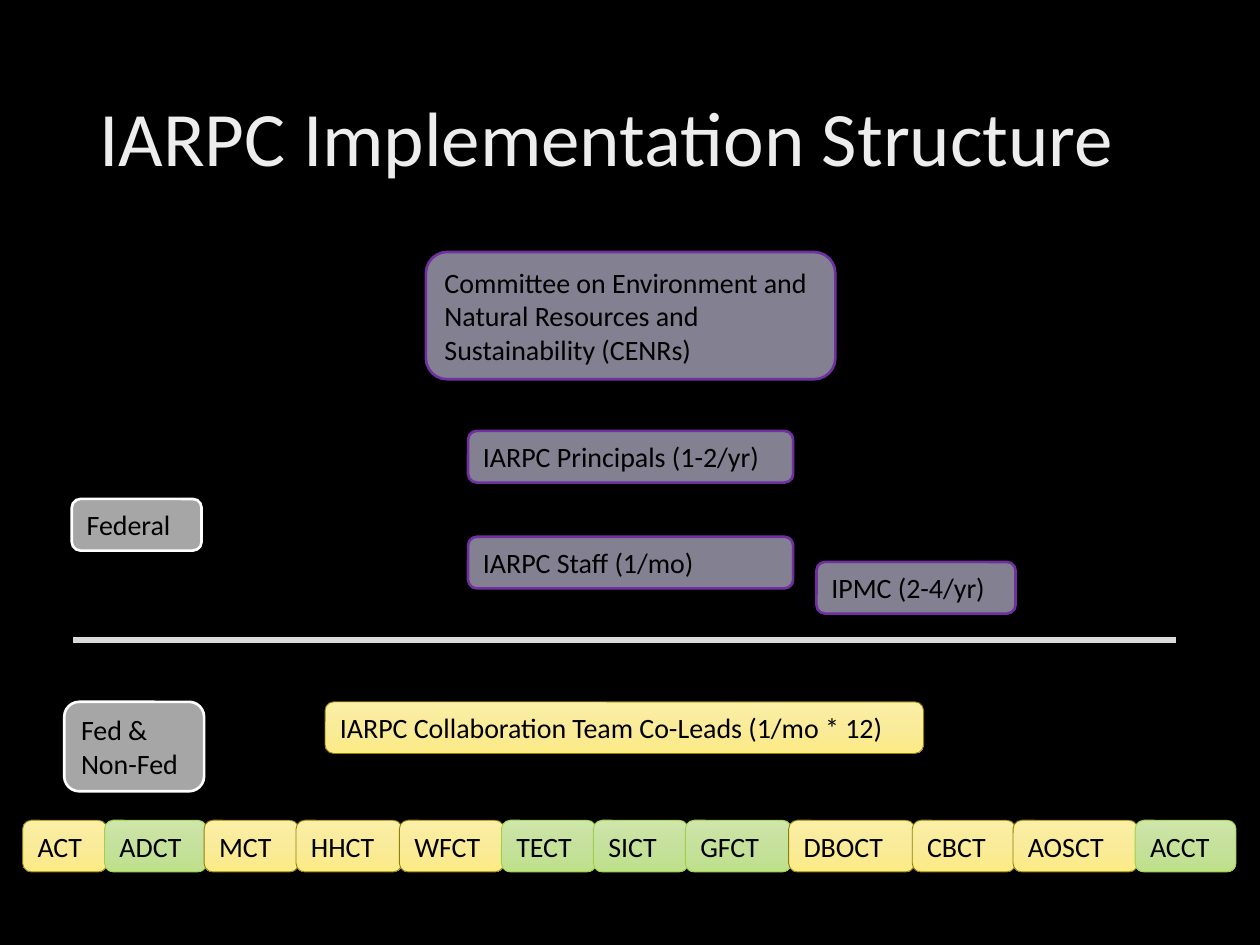
from lxml import etree
from pptx import Presentation
from pptx.dml.color import RGBColor
from pptx.enum.shapes import MSO_CONNECTOR, MSO_SHAPE
from pptx.enum.text import MSO_ANCHOR, MSO_AUTO_SIZE, PP_ALIGN
from pptx.oxml.ns import qn
from pptx.util import Inches, Pt

ROUND = MSO_SHAPE.ROUNDED_RECTANGLE
LINE = MSO_CONNECTOR.STRAIGHT
MID = MSO_ANCHOR.MIDDLE
GROW = MSO_AUTO_SIZE.SHAPE_TO_FIT_TEXT
LEFT = PP_ALIGN.LEFT

BLACK = RGBColor(0x00, 0x00, 0x00)
WHITE = RGBColor(0xFF, 0xFF, 0xFF)
SILVER = RGBColor(0xD9, 0xD9, 0xD9)
LILAC = RGBColor(0xC9, 0xC6, 0xDF)
PURPLE = RGBColor(0x70, 0x30, 0xA0)
OLIVE = RGBColor(0x8F, 0x7F, 0x08)
LIME = RGBColor(0xA2, 0xCF, 0x49)
SHINE = ((0, RGBColor(0xBF, 0xBF, 0xBF)), (28, RGBColor(0xED, 0xED, 0xED)),
         (100, WHITE))
GOLD = ((0, RGBColor(0xFB, 0xEF, 0xA7)), (50, RGBColor(0xF9, 0xEB, 0x99)),
        (100, RGBColor(0xFD, 0xEB, 0x85)))
GREEN = ((0, RGBColor(0xCE, 0xE6, 0xAA)), (50, RGBColor(0xC5, 0xE1, 0x9C)),
         (100, RGBColor(0xBE, 0xE0, 0x8A)))

# Each look: solid colour or gradient stops, edge colour, edge width
FED = (LILAC, PURPLE, 1.5)
LABEL = (WHITE, WHITE, 1.5)
LEAD = (GOLD, OLIVE, 0.5)
TEAM = (GREEN, LIME, 0.5)

ROW = 0.41    # height of a one-line box
LAP = 0.02    # overlap of neighbouring teams
TEAMS = (
    ("ACT", 0.65, LEAD), ("ADCT", 0.79, TEAM), ("MCT", 0.73, LEAD),
    ("HHCT", 0.82, LEAD), ("WFCT", 0.81, LEAD), ("TECT", 0.73, TEAM),
    ("SICT", 0.73, TEAM), ("GFCT", 0.82, TEAM), ("DBOCT", 0.98, LEAD),
    ("CBCT", 0.80, LEAD), ("AOSCT", 0.97, LEAD), ("ACCT", 0.78, TEAM),
)


def blend(fill, owner, stops, angle):
    """Give a fill a gradient whose angle runs clockwise."""
    fill.gradient()
    fill.gradient_angle = 360 - angle
    group = owner.find(".//" + qn("a:gsLst"))
    for stop in list(group):
        group.remove(stop)
    for place, color in stops:
        stop = etree.SubElement(group, qn("a:gs"), pos=str(place * 1000))
        etree.SubElement(stop, qn("a:srgbClr"), val=str(color))


def write(frame, text, size, **form):
    values = {"word_wrap": True, **form}
    for name, value in values.items():
        setattr(frame, name, value)
    para = frame.paragraphs[0]
    para.alignment = LEFT
    run = para.add_run()
    run.text = text
    for name, value in {"name": "Calibri", "size": Pt(size)}.items():
        setattr(run.font, name, value)
    return para, run


def node(slide, text, box, look):
    paint, edge, width = look
    shape = slide.shapes.add_shape(ROUND, *map(Inches, box))
    shape.shadow.inherit = False
    if isinstance(paint, RGBColor):
        shape.fill.solid()
        shape.fill.fore_color.rgb = paint
        color = shape.fill._xPr.find(".//" + qn("a:srgbClr"))
        etree.SubElement(color, qn("a:alpha"), val="65000")
    else:
        blend(shape.fill, shape.element, paint, 90)
    shape.line.color.rgb = edge
    shape.line.width = Pt(width)
    run = write(shape.text_frame, text, 16, auto_size=GROW,
                vertical_anchor=MID)[1]
    run.font.color.rgb = BLACK


def title(slide, box):
    shape = slide.shapes.add_textbox(*map(Inches, box))
    para, run = write(shape.text_frame, "IARPC Implementation Structure", 44,
                      vertical_anchor=MID)
    para.line_spacing = 0.9
    blend(run.font.fill, shape.element, SHINE, 80)


def federal(slide, box):
    x, y, w, h = box
    # Chain of command, centred on one axis
    chain = (
        ("Committee on Environment and Natural Resources and "
         "Sustainability (CENRs)", 0, 3.25, 1.01),
        ("IARPC Principals (1-2/yr)", 1.42, 2.58, ROW),
        ("IARPC Staff (1/mo)", 2.26, 2.58, ROW),
    )
    mid = x + w / 2 + 0.05
    for text, top, width, height in chain:
        node(slide, text, (mid - width / 2, y + top, width, height), FED)
    node(slide, "IPMC (2-4/yr)", (x + 5.9, y + 2.46, 1.58, ROW), FED)
    node(slide, "Federal", (x - 0.01, y + 1.96, 1.03, ROW), LABEL)
    # Divider along the bottom of the region
    rule = slide.shapes.add_connector(
        LINE, *map(Inches, (x, y + h, x + w, y + h)))
    rule.line.color.rgb = SILVER
    rule.line.width = Pt(3)
    etree.SubElement(rule.element.spPr, qn("a:effectLst"))


def mixed(slide, box):
    x, y, w, h = box
    node(slide, "IARPC Collaboration Team Co-Leads (1/mo * 12)",
         (x + 2.4, y, 4.75, ROW), LEAD)
    node(slide, "Fed & Non-Fed", (x + 0.33, y, 1.11, 0.71), LABEL)
    # Row of teams along the bottom of the region
    left = x
    for text, step, look in TEAMS:
        node(slide, text, (left, y + h - ROW, step + LAP, ROW), look)
        left += step


def main():
    deck = Presentation()
    deck.slide_width, deck.slide_height = Inches(10), Inches(7.5)
    slide = deck.slides.add_slide(deck.slide_layouts[6])
    slide.background.fill.solid()
    slide.background.fill.fore_color.rgb = BLACK
    title(slide, (0.69, 0.4, 8.32, 1.45))
    federal(slide, (0.58, 2, 8.75, 3.08))
    mixed(slide, (0.18, 5.57, 9.63, 1.35))
    deck.save("out.pptx")


if __name__ == "__main__":
    main()
